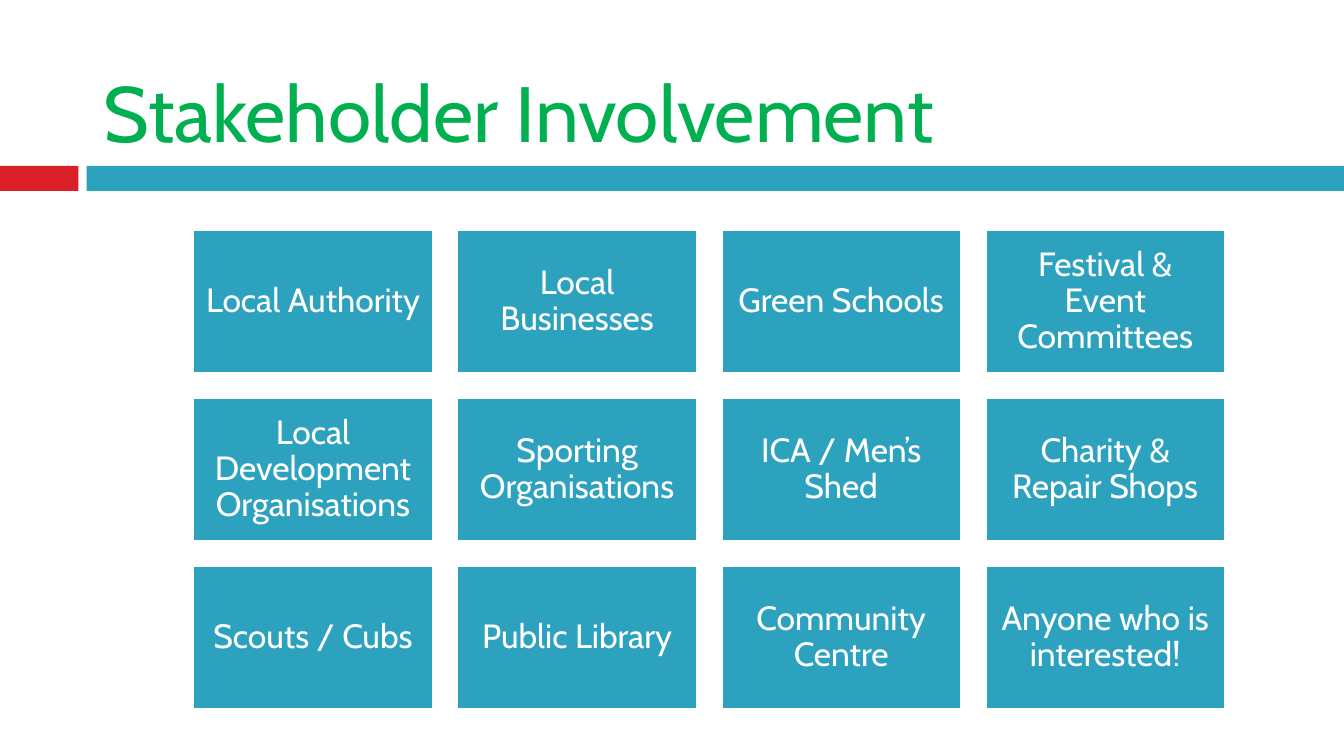
from collections import namedtuple

from pptx import Presentation
from pptx.dml.color import RGBColor
from pptx.enum.shapes import MSO_SHAPE
from pptx.enum.text import MSO_ANCHOR, MSO_AUTO_SIZE, PP_ALIGN
from pptx.util import Inches, Pt

RECTANGLE = MSO_SHAPE.RECTANGLE
MIDDLE, BOTTOM = MSO_ANCHOR.MIDDLE, MSO_ANCHOR.BOTTOM
LEFT, CENTER = PP_ALIGN.LEFT, PP_ALIGN.CENTER
NO_FIT = MSO_AUTO_SIZE.NONE

COLORS = {"red": "DA1F28", "teal": "2DA2BF", "green": "00B050", "white": "FFFFFF"}
FONT = "Cabin"
TITLE_ONLY = 5
COLUMNS, ROWS = 4, 3
GAP_SHARE = 0.1

STAKEHOLDERS = [
    "Local Authority", "Local Businesses", "Green Schools", "Festival & Event Committees",
    "Local Development Organisations", "Sporting Organisations", "ICA / Men’s Shed",
    "Charity & Repair Shops",
    "Scouts / Cubs", "Public Library", "Community Centre", "Anyone who is interested!",
]

Box = namedtuple("Box", "left top width height")


def percent_box(deck, left, top, width, height):
    across, down = deck.slide_width / 100, deck.slide_height / 100
    return Box(int(left * across), int(top * down), int(width * across), int(height * down))


def color(name):
    return RGBColor.from_string(COLORS[name])


def add_rectangle(page, box, fill):
    shape = page.shapes.add_shape(RECTANGLE, *box)
    shape.shadow.inherit = False
    shape.fill.solid()
    shape.fill.fore_color.rgb = color(fill)
    shape.line.fill.background()
    return shape


def write_text(frame, text, size, color_name, align, anchor):
    frame.word_wrap = True
    frame.auto_size = NO_FIT
    frame.vertical_anchor = anchor
    para = frame.paragraphs[0]
    para.alignment = align
    span = para.add_run()
    span.text = text
    span.font.name = FONT
    span.font.size = Pt(size)
    span.font.color.rgb = color(color_name)
    return para


def add_band(page, box):
    red_width, teal_start = int(box.width * 0.0583), int(box.width * 0.0645)
    add_rectangle(page, box._replace(width=red_width), "red")
    add_rectangle(page, box._replace(left=box.left + teal_start, width=box.width - teal_start), "teal")


def add_title(page, box, text):
    title = page.shapes.title
    title.left, title.top, title.width, title.height = box
    write_text(title.text_frame, text, 42, "green", LEFT, BOTTOM)


def add_stakeholder(page, box, name):
    card = add_rectangle(page, box, "teal")
    card.line.color.rgb = color("white")
    card.line.width = Pt(1.5)
    frame = card.text_frame
    frame.margin_left = frame.margin_right = Inches(0.07)
    frame.margin_top = frame.margin_bottom = Inches(0.07)
    para = write_text(frame, name, 18, "white", CENTER, MIDDLE)
    para.line_spacing = 0.9


def add_stakeholder_grid(page, box, names):
    width = box.width / (COLUMNS + GAP_SHARE * (COLUMNS - 1))
    gap = width * GAP_SHARE
    height = (box.height - gap * (ROWS - 1)) / ROWS
    for index, name in enumerate(names):
        row, column = divmod(index, COLUMNS)
        left = box.left + column * (width + gap)
        top = box.top + row * (height + gap)
        add_stakeholder(page, Box(int(left), int(top), int(width), int(height)), name)


def main():
    deck = Presentation()
    deck.slide_width = Inches(10)
    deck.slide_height = deck.slide_width * 9 // 16
    page = deck.slides.add_slide(deck.slide_layouts[TITLE_ONLY])
    add_band(page, percent_box(deck, 0, 21.94, 100, 3.33))
    add_title(page, percent_box(deck, 6.7, 2.31, 89.2, 19.56), "Stakeholder Involvement")
    add_stakeholder_grid(page, percent_box(deck, 14.36, 30.4, 76.8, 63.5), STAKEHOLDERS)
    deck.save("out.pptx")


if __name__ == "__main__":
    main()
